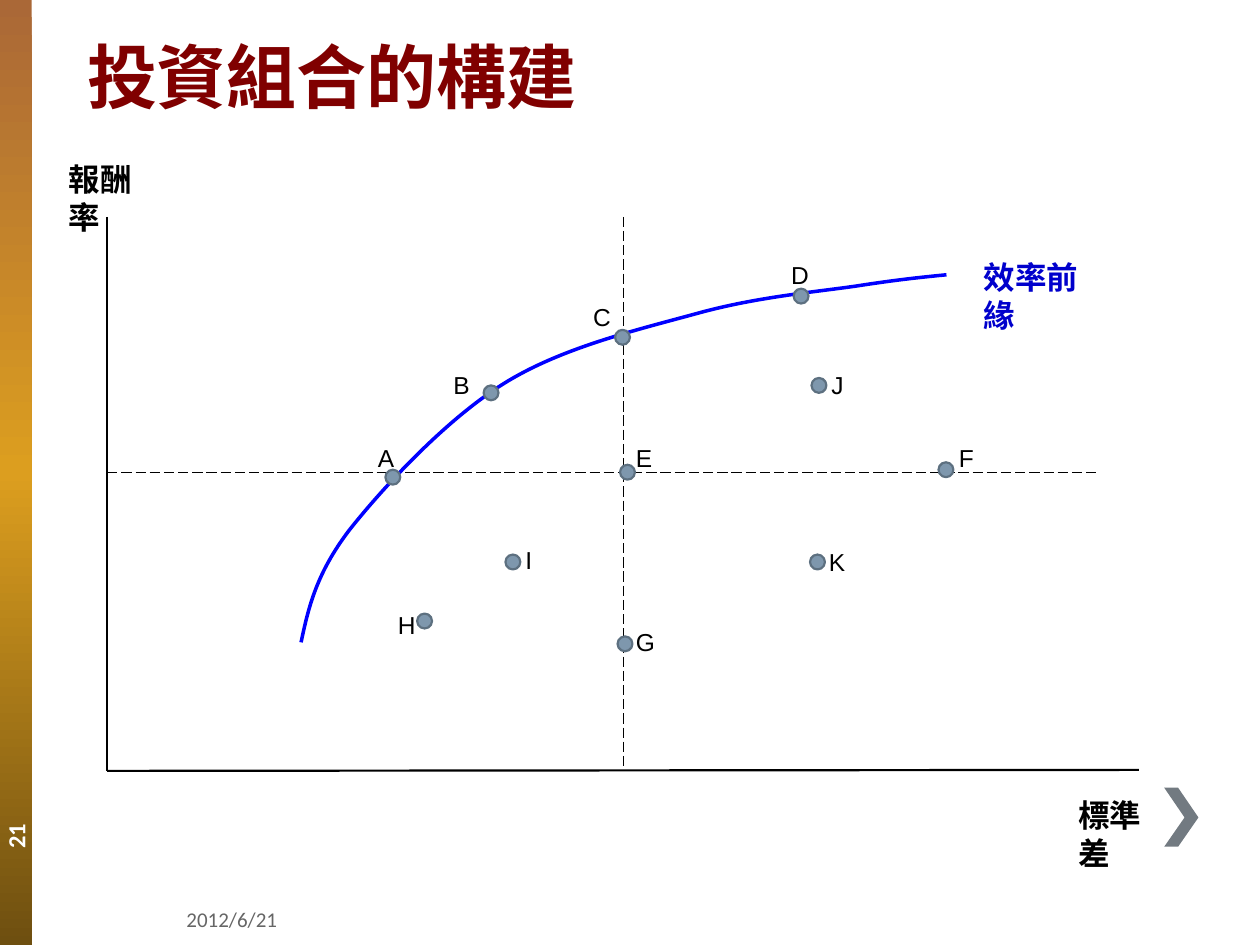
from copy import deepcopy

from lxml import etree
from pptx import Presentation
from pptx import util as u
from pptx.dml.color import RGBColor
from pptx.enum import dml, shapes, text
from pptx.oxml.ns import qn

BLACK = RGBColor(0x00, 0x00, 0x00)
WHITE = RGBColor(0xFF, 0xFF, 0xFF)
MAROON = RGBColor(0x80, 0x00, 0x00)
GRAY = RGBColor(0x66, 0x66, 0x66)
CHEVRON = RGBColor(0x72, 0x7A, 0x81)
CURVE = RGBColor(0x00, 0x00, 0xFF)
CAPTION = RGBColor(0x00, 0x00, 0xCC)
DOT_FILL = RGBColor(0x7E, 0x97, 0xAD)
DOT_LINE = RGBColor(0x5D, 0x70, 0x80)
BAR_STOPS = [
    (0, RGBColor(0xAA, 0x68, 0x37)),
    (0.5, RGBColor(0xDC, 0x9E, 0x1F)),
    (1, RGBColor(0x6E, 0x4F, 0x10)),
]

# Portfolio: (label left, label top), (dot left, dot top), in cm
PORTFOLIOS = {
    "A": ((7.37, 8.81), (7.77, 9.47)),
    "B": ((8.89, 7.34), (9.75, 7.77)),
    "C": ((11.71, 5.97), (12.4, 6.65)),
    "D": ((15.7, 5.11), (16, 5.82)),
    "E": ((12.57, 8.81), (12.5, 9.37)),
    "F": ((19.08, 8.81), (18.92, 9.32)),
    "G": ((12.57, 12.52), (12.45, 12.83)),
    "H": ((7.77, 12.17), (8.41, 12.37)),
    "I": ((10.34, 10.87), (10.19, 11.18)),
    "J": ((16.51, 7.34), (16.36, 7.62)),
    "K": ((16.46, 10.9), (16.33, 11.18)),
}
# Start point, then two control points and an end point per segment
FRONTIER = [
    (6.07, 12.95),
    (6.22, 12.24), (6.38, 11.56), (7.04, 10.69),
    (7.72, 9.83), (8.97, 8.48), (10.13, 7.75),
    (11.3, 7.01), (12.85, 6.65), (14.05, 6.32),
    (15.24, 5.99), (16.41, 5.89), (17.25, 5.77),
    (18.08, 5.64), (18.57, 5.59), (19.08, 5.54),
]
ARROW = [(23.75, 15.88), (23.47, 15.88), (23.88, 16.48),
         (23.47, 17.07), (23.75, 17.07), (24.16, 16.48)]


def cm(values):
    return [u.Cm(value) for value in values]


def write(frame, words, size=14, font="Arial", color=BLACK, bold=False,
          anchor=text.MSO_ANCHOR.TOP):
    frame.word_wrap = True
    frame.vertical_anchor = anchor
    para = frame.paragraphs[0]
    para.alignment = text.PP_ALIGN.LEFT
    span = para.add_run()
    span.text = words
    span.font.size = u.Pt(size)
    span.font.name = font
    span.font.bold = bold
    span.font.color.rgb = color


class Painter:
    """Draws on the current slide, with lengths in cm."""

    def __init__(self, slide):
        self.slide = slide
        self.shapes = slide.shapes

    def title(self, words, box, **style):
        title = self.shapes.title
        title.left, title.top, title.width, title.height = cm(box)
        write(title.text_frame, words, **style)

    def label(self, words, box, rotation=0, **style):
        label = self.shapes.add_textbox(*cm(box))
        label.rotation = rotation
        write(label.text_frame, words, **style)

    def gradient_bar(self, box, stops):
        bar = self.shapes.add_shape(shapes.MSO_SHAPE.RECTANGLE, *cm(box))
        bar.shadow.inherit = False
        bar.line.fill.background()
        bar.fill.gradient()
        bar.fill.gradient_angle = 270
        stop_list = bar.element.spPr.find(".//" + qn("a:gsLst"))
        stop_list.append(deepcopy(stop_list[0]))
        for stop, (position, color) in zip(bar.fill.gradient_stops, stops):
            stop.position = position
            stop.color.rgb = color

    def line(self, start, end, width=1.25, dash=None):
        line = self.shapes.add_connector(
            shapes.MSO_CONNECTOR.STRAIGHT, *cm(start + end))
        line.line.color.rgb = BLACK
        line.line.width = u.Pt(width)
        if dash:
            line.line.dash_style = dash
        etree.SubElement(line.element.spPr, qn("a:effectLst"))

    def dot(self, left, top, size=0.3):
        dot = self.shapes.add_shape(
            shapes.MSO_SHAPE.FLOWCHART_CONNECTOR, *cm((left, top, size, size)))
        dot.shadow.inherit = False
        dot.fill.solid()
        dot.fill.fore_color.rgb = DOT_FILL
        dot.line.color.rgb = DOT_LINE
        dot.line.width = u.Pt(1.25)

    def outline(self, points, close):
        start, *rest = [cm(point) for point in points]
        builder = self.shapes.build_freeform(*start)
        builder.add_line_segments(rest, close=close)
        shape = builder.convert_to_shape()
        shape.shadow.inherit = False
        return shape

    def polygon(self, points, color):
        polygon = self.outline(points, close=True)
        polygon.fill.solid()
        polygon.fill.fore_color.rgb = color
        polygon.line.fill.background()

    def curve(self, points, color, width):
        """Turn each three straight segments into one Bezier segment."""
        curve = self.outline(points, close=False)
        curve.fill.background()
        curve.line.color.rgb = color
        curve.line.width = u.Pt(width)
        steps = list(curve.element.iter(qn("a:lnTo")))
        for first in range(0, len(steps), 3):
            bezier = etree.Element(qn("a:cubicBezTo"))
            steps[first].addprevious(bezier)
            for step in steps[first:first + 3]:
                bezier.append(step[0])
                step.getparent().remove(step)


def main():
    deck = Presentation()
    deck.slide_width, deck.slide_height = u.Cm(25.4), u.Cm(19.05)
    page = Painter(deck.slides.add_slide(deck.slide_layouts[5]))
    middle = text.MSO_ANCHOR.MIDDLE

    page.gradient_bar((0, 0, 0.64, 19.05), BAR_STOPS)
    page.polygon(ARROW, CHEVRON)
    page.title("投資組合的構建", (1.5, 0, 23.01, 2.49), size=40, font="Calibri",
               color=MAROON, bold=True, anchor=text.MSO_ANCHOR.BOTTOM)
    page.label("2012/6/21", (3.51, 18.21, 19.89, 0.64), size=12,
               font="Calibri", color=GRAY, anchor=middle)
    page.label("21", (-3.33, 13.39, 7.29, 0.64), rotation=270, size=14,
               font="Calibri", color=WHITE, bold=True, anchor=middle)

    left, top, bottom = 2.16, 4.37, 15.54
    dash = dml.MSO_LINE.LONG_DASH
    page.line((left, top), (left, bottom))
    page.line((left, bottom), (22.96, 15.52))
    page.line((left, 9.53), (22.1, 9.53), width=0.75, dash=dash)
    page.line((12.57, top), (12.57, bottom), width=0.75, dash=dash)
    page.curve(FRONTIER, CURVE, 2)

    for words, box, color in [
        ("報酬率", (1.14, 3.1, 1.98, 0.84), BLACK),
        ("標準差", (21.49, 15.93, 1.98, 0.84), BLACK),
        ("效率前緣", (19.58, 5.08, 2.49, 0.84), CAPTION),
    ]:
        page.label(words, box, size=18, color=color, bold=True)

    for name, (corner, _) in PORTFOLIOS.items():
        page.label(name, corner + (0.9, 0.86))
    for _, corner in PORTFOLIOS.values():
        page.dot(*corner)

    deck.save("out.pptx")


if __name__ == "__main__":
    main()
